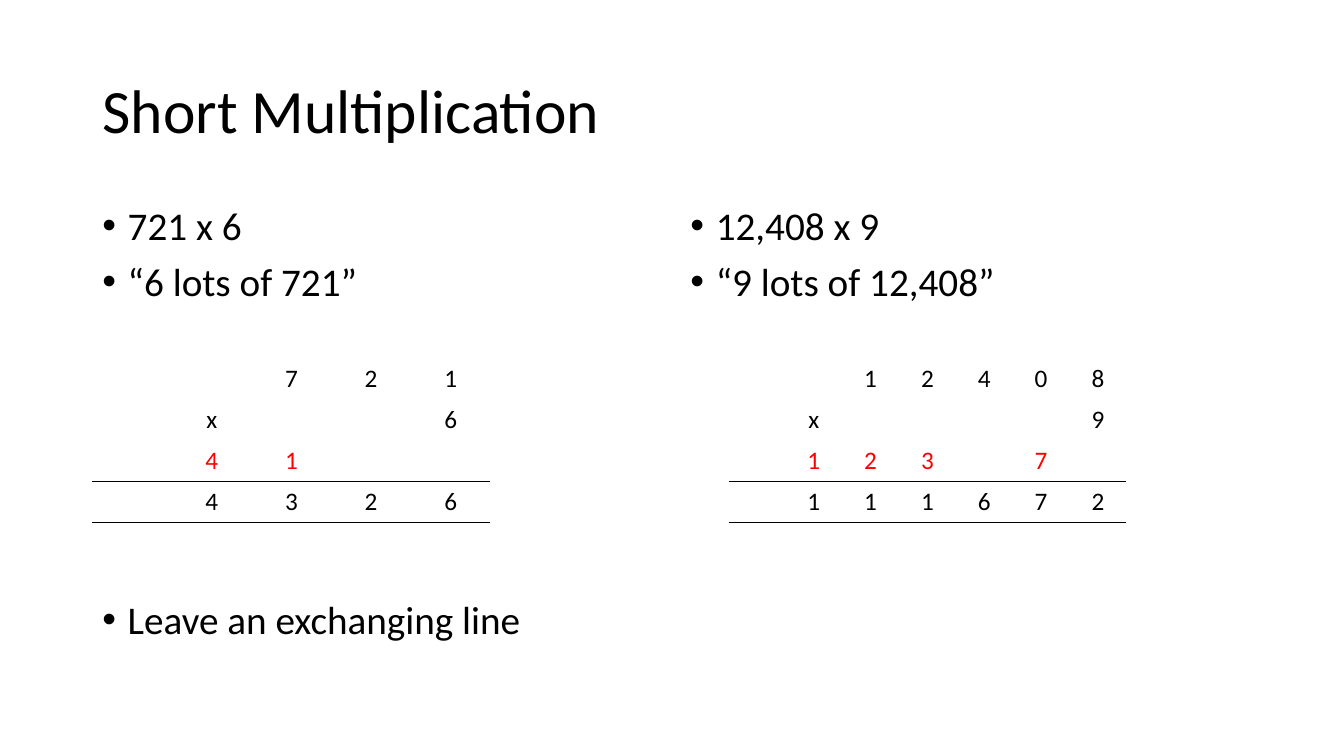
from lxml.etree import SubElement
from pptx import Presentation
from pptx.dml.color import RGBColor
from pptx.enum.text import MSO_ANCHOR as Anchor, PP_ALIGN as Align
from pptx.oxml.ns import qn
from pptx.util import Cm, Pt

BLACK = RGBColor(0x00, 0x00, 0x00)
RED = RGBColor(0xFF, 0x00, 0x00)
TITLE_ONLY = 5
EXCHANGE_ROW, ANSWER_ROW = 2, 3
MARGIN = Cm(2.33)
COLUMN_TOP, COLUMN_WIDTH, COLUMN_HEIGHT = Cm(5.07), Cm(14.39), Cm(12.09)
SUM_TOP, SUM_WIDTH, ROW_HEIGHT = Cm(9.04), Cm(10.03), Cm(1.03)


def set_font(paragraph, size, color=BLACK):
    """Give a paragraph the slide's typeface at a size and colour."""
    font = paragraph.font
    font.name, font.size, font.color.rgb = "Calibri", Pt(size), color


def format_title(slide, text):
    """Place the title placeholder and fill it."""
    title = slide.shapes.title
    title.left, title.top, title.width, title.height = MARGIN, Cm(1.01), Cm(29.21), Cm(3.68)
    title.text_frame.text = text
    title.text_frame.vertical_anchor = Anchor.MIDDLE
    paragraph = title.text_frame.paragraphs[0]
    paragraph.alignment, paragraph.line_spacing = Align.LEFT, 0.9
    set_font(paragraph, 44)


def add_bullets(slide, left, items):
    """Add a column of bullets from pairs of text and space before in points."""
    shape = slide.shapes.add_textbox(left, COLUMN_TOP, COLUMN_WIDTH, COLUMN_HEIGHT)
    frame = shape.text_frame
    frame.word_wrap = True
    frame.text = "\n".join(text for text, _ in items)
    for paragraph, (_, space) in zip(frame.paragraphs, items):
        paragraph.line_spacing, paragraph.space_before = 0.9, Pt(space)
        set_font(paragraph, 28)
        properties = paragraph._p.get_or_add_pPr()
        indent = Cm(0.64)
        properties.set("marL", str(indent))
        properties.set("indent", str(-indent))
        bullet_font = SubElement(properties, qn("a:buFont"), typeface="Arial")
        bullet = SubElement(properties, qn("a:buChar"), char="•")
        properties.find(qn("a:defRPr")).addprevious(bullet_font)
        bullet_font.addnext(bullet)


def set_borders(cell, ruled_sides):
    """Rule the named sides of a cell in black and clear the others."""
    properties = cell._tc.get_or_add_tcPr()
    for side in "LRTB":
        line = SubElement(properties, qn(f"a:ln{side}"), w=str(Pt(1)))
        if side in ruled_sides:
            fill = SubElement(line, qn("a:solidFill"))
            SubElement(fill, qn("a:srgbClr"), val=str(BLACK))
        else:
            SubElement(line, qn("a:noFill"))


def add_sum(slide, left, rows):
    """Add a column multiplication, one character to a cell."""
    row_count, column_count = len(rows), len(rows[0])
    frame = slide.shapes.add_table(
        row_count, column_count, left, SUM_TOP, SUM_WIDTH, ROW_HEIGHT * row_count)
    table = frame.table
    table.first_row = table.horz_banding = False
    ruled_sides = {EXCHANGE_ROW: "B", ANSWER_ROW: "TB"}
    for row_index, digits in enumerate(rows):
        for column_index, digit in enumerate(digits):
            cell = table.cell(row_index, column_index)
            cell.text = digit.strip()
            cell.vertical_anchor = Anchor.MIDDLE
            paragraph = cell.text_frame.paragraphs[0]
            paragraph.alignment = Align.CENTER
            set_font(paragraph, 18, RED if row_index == EXCHANGE_ROW else BLACK)
            set_borders(cell, ruled_sides.get(row_index, ""))
            cell.fill.background()


def main():
    """Build the short multiplication slide."""
    presentation = Presentation()
    presentation.slide_width, presentation.slide_height = Cm(33.87), Cm(19.05)
    slide = presentation.slides.add_slide(presentation.slide_layouts[TITLE_ONLY])
    format_title(slide, "Short Multiplication")
    add_bullets(slide, MARGIN, [
        ("721 x 6", 10), ("“6 lots of 721”", 10), ("Leave an exchanging line", 211)])
    add_bullets(slide, Cm(17.15), [("12,408 x 9", 10), ("“9 lots of 12,408”", 10)])
    add_sum(slide, MARGIN, ["  721", " x  6", " 41  ", " 4326"])
    add_sum(slide, Cm(18.36), ["  12408", " x    9", " 123 7 ", " 111672"])
    presentation.save("out.pptx")


if __name__ == "__main__":
    main()
